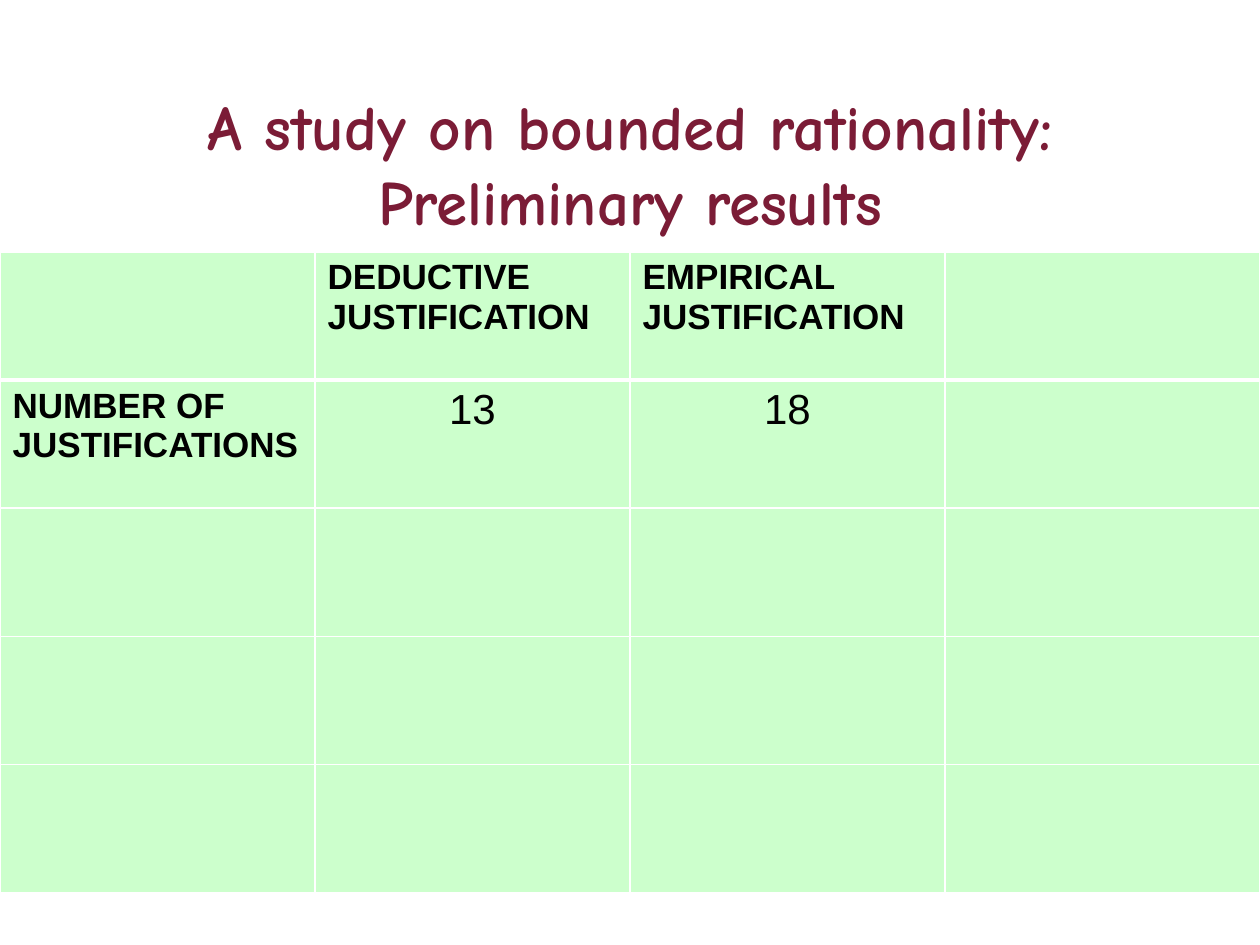
from lxml import etree
from pptx import Presentation
from pptx.dml.color import RGBColor
from pptx.enum import text as t
from pptx.oxml.ns import qn
from pptx.util import Pt

COLOURS = {"title": "7B1C36", "cell": "CCFFCC", "rule": "FFFFFF", "text": "000000"}
ROWS, COLUMNS = 5, 4
COLUMN_WIDTH, ROW_HEIGHT = 180, 73.2
LABELS = {
    (0, 1): "DEDUCTIVE\nJUSTIFICATION",
    (0, 2): "EMPIRICAL\nJUSTIFICATION",
    (1, 0): "NUMBER OF JUSTIFICATIONS",
}
COUNTS = {(1, 1): "13", (1, 2): "18"}


def format_frame(frame, font, size, colour, bold, align):
    for para in frame.paragraphs:
        para.alignment = align
        for span in para.runs:
            span.font.name = font
            span.font.size = Pt(size)
            span.font.bold = bold
            span.font.color.rgb = RGBColor.from_string(COLOURS[colour])


def add_title(page, words):
    title = page.shapes.title
    title.left, title.top, title.width, title.height = Pt(54), Pt(48), Pt(612), Pt(90)
    frame = title.text_frame
    frame.text = words
    frame.auto_size = t.MSO_AUTO_SIZE.NONE
    frame.vertical_anchor = t.MSO_ANCHOR.MIDDLE
    format_frame(frame, "Comic Neue", 36, "title", True, t.PP_ALIGN.CENTER)


def set_border(cell, side, width):
    line = etree.SubElement(cell._tc.get_or_add_tcPr(), qn(f"a:ln{side}"), w=str(Pt(width)))
    fill = etree.SubElement(line, qn("a:solidFill"))
    etree.SubElement(fill, qn("a:srgbClr"), val=COLOURS["rule"])


def style_cell(cell, row):
    # The rule under the header row is heavier than the others
    widths = {"L": 1, "R": 1, "T": 3 if row == 1 else 1, "B": 3 if row == 0 else 1}
    for side, width in widths.items():
        set_border(cell, side, width)
    cell.fill.solid()
    cell.fill.fore_color.rgb = RGBColor.from_string(COLOURS["cell"])


def add_results_table(page):
    table = page.shapes.add_table(
        ROWS, COLUMNS, Pt(0), Pt(144), Pt(COLUMNS * COLUMN_WIDTH), Pt(ROWS * ROW_HEIGHT)
    ).table
    for row in range(ROWS):
        table.rows[row].height = Pt(ROW_HEIGHT)
        for column in range(COLUMNS):
            style_cell(table.cell(row, column), row)

    # Headings, then counts
    for place, words in LABELS.items():
        frame = table.cell(*place).text_frame
        frame.text = words
        format_frame(frame, "Arial", 20, "text", True, t.PP_ALIGN.LEFT)
    for place, count in COUNTS.items():
        frame = table.cell(*place).text_frame
        frame.text = count
        format_frame(frame, "Arial", 24, "text", False, t.PP_ALIGN.CENTER)


def main():
    deck = Presentation()
    deck.slide_width, deck.slide_height = Pt(720), Pt(540)
    page = deck.slides.add_slide(deck.slide_layouts[5])
    add_title(page, "A study on bounded rationality:\vPreliminary results")
    add_results_table(page)
    deck.save("out.pptx")


if __name__ == "__main__":
    main()
